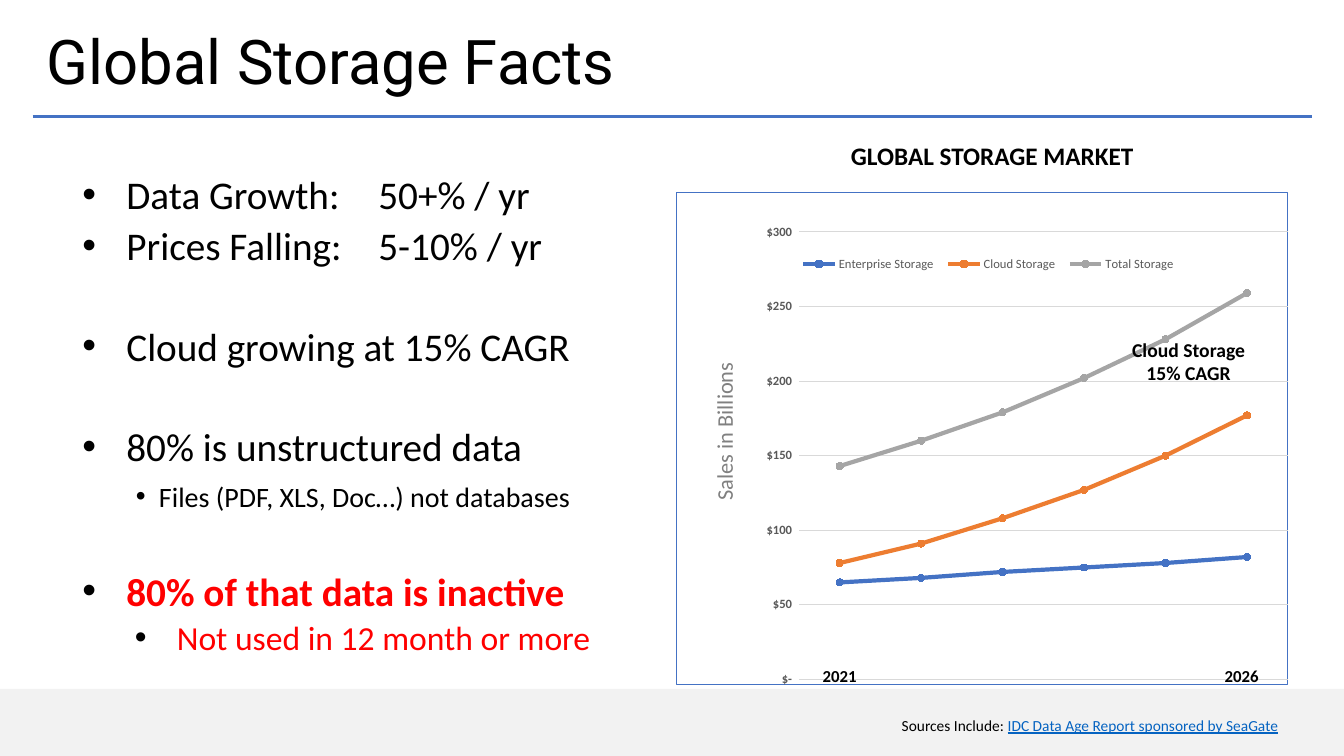
from dataclasses import dataclass
from lxml import etree
from pptx import Presentation, util as u
from pptx.chart.data import CategoryChartData
from pptx.dml.color import RGBColor
from pptx.enum import chart as ch, shapes, text
from pptx.oxml import parse_xml
from pptx.oxml.ns import nsdecls, qn

PX = 9525


@dataclass(frozen=True)
class Theme:
    """Hold the colours, fonts and type sizes of the slide."""
    ink: str = "000000"
    paper: str = "FFFFFF"
    band: str = "F2F2F2"
    blue: str = "4472C4"
    orange: str = "ED7D31"
    grey: str = "A5A5A5"
    grid: str = "D9D9D9"
    label: str = "595959"
    mute: str = "808080"
    red: str = "FF0000"
    link: str = "0563C1"
    head: str = "Roboto"
    body: str = "Calibri"
    title: int = 44
    large: int = 28
    mid: int = 24
    small: int = 20
    name: int = 18
    axis: int = 16
    note: int = 14
    year: int = 12
    source: int = 11
    base: int = 10
    tick: int = 9


T = Theme()

FACTS = [
    ("Data Growth: \t50+% / yr", dict(gap=0)),
    ("Prices Falling:\t5-10% / yr", {}),
    ("Cloud growing at 15% CAGR", dict(gap=46)),
    ("80% is unstructured data", dict(gap=46)),
    ("Files (PDF, XLS, Doc…) not databases",
     dict(size=T.small, level=1, left=79, hang=22, gap=5)),
    ("80% of that data is inactive", dict(color=T.red, bold=True, gap=46)),
    ("Not used in 12 month or more",
     dict(size=T.mid, color=T.red, level=1, left=96, hang=40, gap=5)),
]

SALES = [
    ("Enterprise Storage", T.blue, (65, 68, 72, 75, 78, 82)),
    ("Cloud Storage", T.orange, (78, 91, 108, 127, 150, 177)),
    ("Total Storage", T.grey, (143, 160, 179, 202, 228, 259)),
]

LABELS = [
    ("Cloud Storage\n15% CAGR", (1068, 317, 128, 55),
     dict(size=T.note, bold=True, align=text.PP_ALIGN.CENTER), 0),
    ("Sales in Billions", (614, 392, 152, 36), dict(size=T.axis, color=T.mute), 270),
    ("2021", (774, 629, 53, 29), dict(size=T.year, bold=True), 0),
    ("2026", (1157, 629, 53, 29), dict(size=T.year, bold=True), 0),
    ("GLOBAL STORAGE MARKET", (801, 129, 291, 38), dict(size=T.name, bold=True), 0),
]


def px(*vals):
    """Turn px lengths into EMU."""
    return [u.Emu(v * PX) for v in vals]


def rgb(code):
    """Return a colour from its hex code."""
    return RGBColor.from_string(code)


def style(font, size, color=T.ink, face=T.body, bold=False, line=None):
    """Format a font."""
    font.size, font.name, font.bold = u.Pt(size), face, bold
    font.color.rgb = rgb(color)
    if line:
        font.underline = True


def write(para, words, align=None, **form):
    """Add formatted words to a paragraph."""
    run = para.add_run()
    run.text = words
    style(run.font, **form)
    if align is not None:
        para.alignment = align


def box(slide, spot, wrap=True):
    """Add an empty text box."""
    shape = slide.shapes.add_textbox(*px(*spot))
    shape.text_frame.word_wrap = wrap
    return shape


def paras(frame, count):
    """Return the given number of paragraphs of an empty frame."""
    return [frame.paragraphs[0]] + [frame.add_paragraph() for _ in range(count - 1)]


def label(slide, words, spot, form, turn):
    """Add a short label, one paragraph a line."""
    shape = box(slide, spot, wrap=False)
    shape.rotation = turn
    lines = words.split("\n")
    for para, line in zip(paras(shape.text_frame, len(lines)), lines):
        write(para, line, **form)


def bullet(para, words, level=0, left=48, hang=42, gap=10, size=T.large, **form):
    """Fill a paragraph as a bullet point."""
    props = para._p.get_or_add_pPr()
    props.set("marL", str(left * PX))
    props.set("indent", str(-hang * PX))
    tint = etree.SubElement(props, qn("a:buClr"))
    etree.SubElement(tint, qn("a:srgbClr"), val=T.ink)
    etree.SubElement(props, qn("a:buFont"), typeface="Arial")
    etree.SubElement(props, qn("a:buChar"), char="•")
    para.level = level
    para.line_spacing, para.space_before = u.Pt(26), u.Pt(gap)
    write(para, words, size=size, **form)


def place(parent, index, spot, inner=False):
    """Give a chart part a fixed place, in shares of the chart."""
    for old in parent.findall(qn("c:layout")):
        parent.remove(old)
    layout = etree.Element(qn("c:layout"))
    manual = etree.SubElement(layout, qn("c:manualLayout"))
    if inner:
        etree.SubElement(manual, qn("c:layoutTarget"), val="inner")
    for key in ("xMode", "yMode"):
        etree.SubElement(manual, qn("c:" + key), val="edge")
    for key, val in zip("xywh", spot):
        etree.SubElement(manual, qn("c:" + key), val=str(val))
    parent.insert(index, layout)


def frame(chart):
    """Give the chart a white ground and a thin blue border."""
    props = parse_xml(
        f'<c:spPr {nsdecls("c", "a")}><a:solidFill><a:srgbClr val="{T.paper}"/>'
        f'</a:solidFill><a:ln w="{PX}"><a:solidFill><a:srgbClr val="{T.blue}"/>'
        '</a:solidFill></a:ln></c:spPr>')
    chart._chartSpace.find(qn("c:chart")).addnext(props)


def graph(slide, spot):
    """Add the line chart of storage sales."""
    data = CategoryChartData()
    data.categories = [str(n) for n in range(1, 7)]
    for name, _, vals in SALES:
        data.add_series(name, vals)
    chart = slide.shapes.add_chart(
        ch.XL_CHART_TYPE.LINE_MARKERS, *px(*spot), data).chart
    style(chart.font, T.base)
    frame(chart)
    chart.has_title = False
    chart.has_legend = True
    key = chart.legend
    key.position, key.include_in_layout = ch.XL_LEGEND_POSITION.BOTTOM, True
    style(key.font, T.tick, T.label)
    place(key._element, 1, (0.19, 0.12, 0.64, 0.05))
    place(chart._chartSpace.chart.plotArea, 0, (0.2, 0.08, 0.8, 0.91), inner=True)
    chart.category_axis.visible = False
    axis = chart.value_axis
    axis.minimum_scale, axis.maximum_scale, axis.major_unit = 0, 300, 50
    axis.major_tick_mark = axis.minor_tick_mark = ch.XL_TICK_MARK.NONE
    axis.format.line.fill.background()
    grid = axis.major_gridlines.format.line
    grid.color.rgb, grid.width = rgb(T.grid), u.Pt(0.75)
    ticks = axis.tick_labels
    ticks.number_format, ticks.number_format_is_linked = '"$"#,##0_);;"$-"_)', False
    style(ticks.font, T.tick, T.label, bold=True)
    for line, (_, color, _) in zip(chart.plots[0].series, SALES):
        line.smooth = False
        line.format.line.color.rgb, line.format.line.width = rgb(color), u.Pt(3)
        mark = line.marker
        mark.style, mark.size = ch.XL_MARKER_STYLE.CIRCLE, 5
        mark.format.fill.solid()
        mark.format.fill.fore_color.rgb = rgb(color)
        mark.format.line.color.rgb = rgb(color)


def band(slide, spot):
    """Add the plain footer band."""
    shape = slide.shapes.add_shape(shapes.MSO_SHAPE.RECTANGLE, *px(*spot))
    shape.shadow.inherit = False
    shape.fill.solid()
    shape.fill.fore_color.rgb = rgb(T.band)
    shape.line.fill.background()


def rule(slide, ends):
    """Add the line below the title."""
    line = slide.shapes.add_connector(shapes.MSO_CONNECTOR.STRAIGHT, *px(*ends))
    line.line.color.rgb, line.line.width = rgb(T.blue), u.Pt(2.75)
    etree.SubElement(line._element.spPr, qn("a:effectLst"))


def title(slide, words, spot):
    """Place and fill the title."""
    shape = slide.shapes.title
    shape.left, shape.top, shape.width, shape.height = px(*spot)
    shape.text_frame.vertical_anchor = text.MSO_ANCHOR.MIDDLE
    write(shape.text_frame.paragraphs[0], words, size=T.title, face=T.head,
          align=text.PP_ALIGN.LEFT)


def main():
    """Build and save the slide."""
    deck = Presentation()
    deck.slide_width, deck.slide_height = px(1280, 720)
    slide = deck.slides.add_slide(deck.slide_layouts[5])
    band(slide, (0, 656, 1280, 64))
    rule(slide, (31, 111, 1250, 111))
    title(slide, "Global Storage Facts", (35, 15, 1162, 84))
    facts = box(slide, (63, 168, 577, 457)).text_frame
    for para, (words, form) in zip(paras(facts, len(FACTS)), FACTS):
        bullet(para, words, **form)
    graph(slide, (644, 183, 583, 471))
    for item in LABELS:
        label(slide, *item)
    source = box(slide, (587, 677, 640, 28)).text_frame.paragraphs[0]
    write(source, "Sources Include: ", size=T.source, align=text.PP_ALIGN.RIGHT)
    write(source, "IDC Data Age Report sponsored by SeaGate", size=T.source,
          color=T.link, line=True)
    deck.save("out.pptx")


if __name__ == "__main__":
    main()
